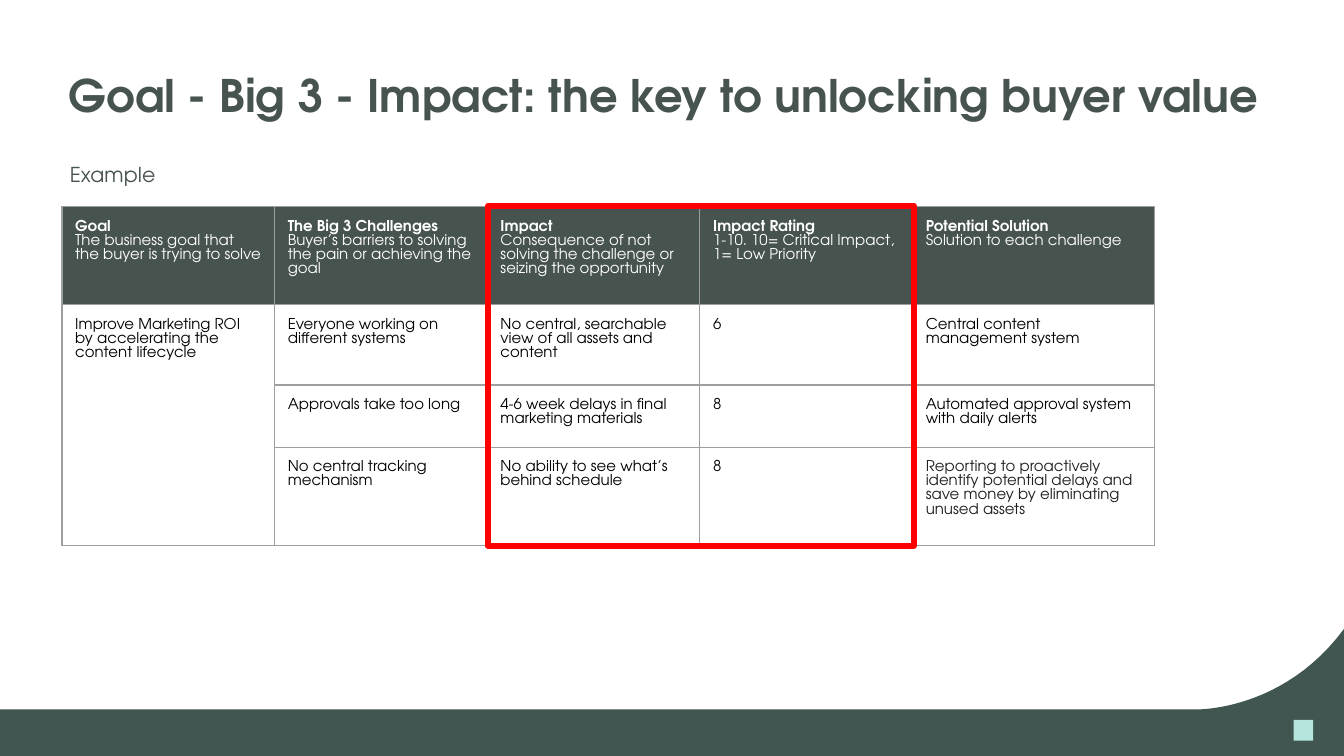
"""Build the slide that shows how goals, challenges and impact reveal buyer value."""
from lxml.etree import SubElement
from pptx import Presentation
from pptx.dml.color import RGBColor
from pptx.enum.shapes import MSO_SHAPE
from pptx.enum.text import MSO_ANCHOR, MSO_AUTO_SIZE
from pptx.oxml.ns import qn
from pptx.util import Cm, Pt

SLATE = RGBColor(0x47, 0x53, 0x4F)
FOREST = RGBColor(0x41, 0x56, 0x51)
MINT = RGBColor(0xB5, 0xE5, 0xDC)
RED = RGBColor(0xFF, 0x00, 0x00)
WHITE = RGBColor(0xFF, 0xFF, 0xFF)
BLACK = RGBColor(0x00, 0x00, 0x00)
CHARCOAL = RGBColor(0x1F, 0x1F, 0x1F)
GRID_GREY = "9E9E9E"
FONT = "TeX Gyre Adventor"


def write(paragraph, text, size, color, bold=False):
    run = paragraph.add_run()
    run.text = text
    for name, value in {"name": FONT, "size": Pt(size), "bold": bold}.items():
        setattr(run.font, name, value)
    run.font.color.rgb = color


def add_borders(cell):
    properties = cell._tc.get_or_add_tcPr()
    for side in ("a:lnL", "a:lnR", "a:lnT", "a:lnB"):
        border = SubElement(properties, qn(side), w=str(Pt(0.75)))
        fill = SubElement(border, qn("a:solidFill"))
        SubElement(fill, qn("a:srgbClr"), val=GRID_GREY)


deck = Presentation()
deck.slide_width, deck.slide_height = Cm(25.4), Cm(14.29)
slide = deck.slides.add_slide(deck.slide_layouts[6])
shapes = slide.shapes

bend = [(22.63, 13.41), (22.63, 13.41), (24.26, 13.44), (25.4, 11.89)]
swoosh = []
for step in range(1, 25):
    t = step / 24
    weights = ((1 - t) ** 3, 3 * t * (1 - t) ** 2, 3 * t ** 2 * (1 - t), t ** 3)
    swoosh.append(tuple(
        Cm(sum(w * point[axis] for w, point in zip(weights, bend))) for axis in (0, 1)
    ))
outline = shapes.build_freeform(Cm(25.4), Cm(14.29))
outline.add_line_segments(
    [(Cm(0), Cm(14.29)), (Cm(0), Cm(13.41)), (Cm(22.63), Cm(13.41))] + swoosh
)
footer = outline.convert_to_shape()
brand_mark = shapes.add_shape(MSO_SHAPE.RECTANGLE, Cm(24.45), Cm(13.61), Cm(0.37), Cm(0.39))
for band, color in ((footer, FOREST), (brand_mark, MINT)):
    band.shadow.inherit = False
    band.fill.solid()
    band.fill.fore_color.rgb = color
    band.line.fill.background()

title = shapes.add_textbox(Cm(1.17), Cm(1.27), Cm(23.06), Cm(1.09)).text_frame
title_format = {
    "word_wrap": True,
    "vertical_anchor": MSO_ANCHOR.BOTTOM,
    "margin_left": Cm(0.13),
    "margin_right": Cm(0.13),
    "margin_top": Cm(0.05),
    "margin_bottom": Cm(0.05),
}
for name, value in title_format.items():
    setattr(title, name, value)
title.paragraphs[0].line_spacing = 0.9
write(title.paragraphs[0], "Goal - Big 3 - Impact: the key to unlocking buyer value", 24, SLATE, True)

margins = dict.fromkeys(("margin_left", "margin_right", "margin_top", "margin_bottom"), Cm(0.25))

headings = [
    ("Goal", "The business goal that the buyer is trying to solve"),
    ("The Big 3 Challenges", "Buyer’s barriers to solving the pain or achieving the goal"),
    ("Impact", "Consequence of not solving the challenge or seizing the opportunity"),
    ("Impact Rating", "1-10. 10= Critical Impact, 1= Low Priority"),
    ("Potential Solution", "Solution to each challenge"),
]
examples = [
    ("Improve Marketing ROI by accelerating the content lifecycle",
     "Everyone working on different systems",
     "No central, searchable view of all assets and content",
     "6", "Central content management system"),
    ("", "Approvals take too long", "4-6 week delays in final marketing materials",
     "8", "Automated approval system with daily alerts"),
    ("", "No central tracking mechanism", "No ability to see what’s behind schedule",
     "8", "Reporting to proactively identify potential delays and save money "
     "by eliminating unused assets"),
]
column_widths = [4.02] * 4 + [4.57]
row_heights = [1.57, 1.3, 1.06, 1.57]
challenges = shapes.add_table(
    4, 5, Cm(1.17), Cm(3.91), Cm(sum(column_widths)), Cm(sum(row_heights))
).table
challenges.horz_banding = False
for column, width in zip(challenges.columns, column_widths):
    column.width = Cm(width)
for row, height in zip(challenges.rows, row_heights):
    row.height = Cm(height)
challenges.cell(1, 0).merge(challenges.cell(3, 0))

for row_number, row in enumerate([headings] + examples):
    for column_number, content in enumerate(row):
        cell = challenges.cell(row_number, column_number)
        for name, value in margins.items():
            setattr(cell, name, value)
        add_borders(cell)
        first = cell.text_frame.paragraphs[0]
        if row_number == 0:
            cell.fill.solid()
            cell.fill.fore_color.rgb = SLATE
            write(first, content[0], 8, WHITE, True)
            write(cell.text_frame.add_paragraph(), content[1], 8, WHITE)
        else:
            cell.fill.background()
            if content:
                write(first, content, 8, CHARCOAL if (row_number, column_number) == (3, 4) else BLACK)

impact_frame = shapes.add_shape(MSO_SHAPE.RECTANGLE, Cm(9.22), Cm(3.89), Cm(8.05), Cm(6.43))
impact_frame.shadow.inherit = False
impact_frame.fill.background()
impact_frame.line.color.rgb = RED
impact_frame.line.width = Pt(3)

subtitle = shapes.add_textbox(Cm(1.07), Cm(2.82), Cm(24.08), Cm(0.99)).text_frame
subtitle_format = {"word_wrap": True, "auto_size": MSO_AUTO_SIZE.SHAPE_TO_FIT_TEXT, **margins}
for name, value in subtitle_format.items():
    setattr(subtitle, name, value)
write(subtitle.paragraphs[0], "Example", 11, SLATE)

deck.save("out.pptx")
